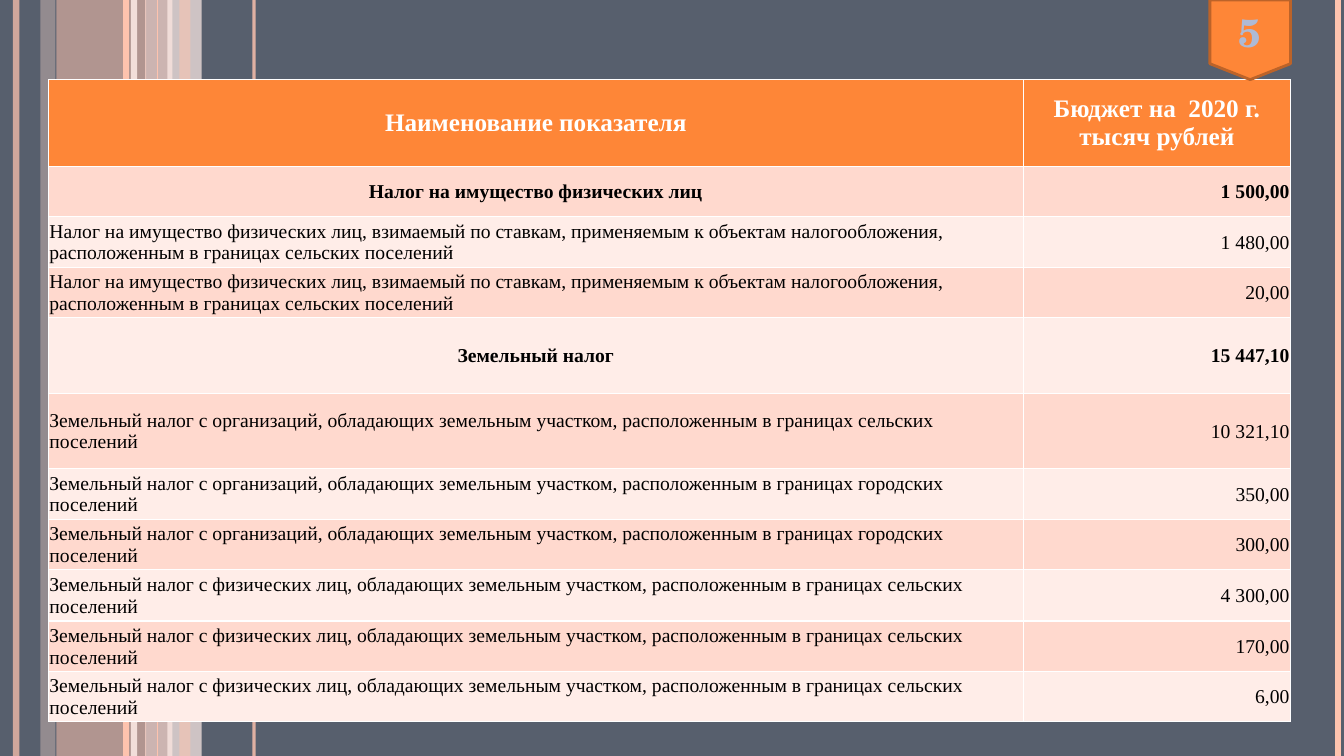
from lxml import etree
from pptx import Presentation
from pptx.dml.color import RGBColor
from pptx.enum import shapes, text
from pptx.oxml.ns import qn
from pptx.util import Inches, Pt

PAGE_NUMBER = "5"
HEADER = ("Наименование показателя", "Бюджет на  2020 г. тысяч рублей")
PROPERTY_TAX = ("Налог на имущество физических лиц, взимаемый по ставкам, применяемым к объектам "
                "налогообложения, расположенным в границах сельских поселений")
LAND_TAX = "Земельный налог с {}, обладающих земельным участком, расположенным в границах {} поселений"
RURAL_FIRMS = LAND_TAX.format("организаций", "сельских")
URBAN_FIRMS = LAND_TAX.format("организаций", "городских")
RURAL_PEOPLE = LAND_TAX.format("физических лиц", "сельских")

# name, amount, row height, is a total
TAXES = [
    ("Налог на имущество физических лиц", "1 500,00", 0.5, True),
    (PROPERTY_TAX, "1 480,00", 0.5, False),
    (PROPERTY_TAX, "20,00", 0.5, False),
    ("Земельный налог", "15 447,10", 0.75, True),
    (RURAL_FIRMS, "10 321,10", 0.75, False),
    (URBAN_FIRMS, "350,00", 0.5, False),
    (URBAN_FIRMS, "300,00", 0.5, False),
    (RURAL_PEOPLE, "4 300,00", 0.51, False),
    (RURAL_PEOPLE, "170,00", 0.5, False),
    (RURAL_PEOPLE, "6,00", 0.5, False),
]
HEADER_HEIGHT = 0.86
COLUMN_WIDTHS = (9.67, 2.65)
TABLE_LEFT, TABLE_TOP = 0.48, 0.79

THEME = {
    "background": "575F6D", "accent": "FE8637", "accent_dark": "BC6329",
    "peach": "FEC3AE", "light": "FFD9CE", "pale": "FFEDE8",
    "white": "FFFFFF", "black": "000000", "number": "AEBAD5",
    "table_font": "Times New Roman", "number_font": "TeX Gyre Schola",
    "header_size": 18, "body_size": 14, "number_size": 28,
}

# left, width, colour, opacity in percent
BARS = [
    (0.56, 0.89, "peach", 54), (0.4, 0.15, "light", 36), (1.44, 0.27, "light", 70),
    (1.66, 0.34, "pale", 71), (1.78, 0.11, "peach", 51),
]
# centre, line width in points, colour, opacity in percent
STRIPES = [
    (0.16, 4.5, "peach", 73), (1.33, 4.5, "pale", 83), (1.25, 4.5, "peach", 100),
    (2.52, 2.25, "peach", 82), (1.56, 0.75, "peach", 100), (13.27, 4.5, "peach", 100),
]
PAGE_WIDTH, PAGE_HEIGHT = 13.33, 7.5


def colour(name):
    return RGBColor.from_string(THEME[name])


def paint(fill, name):
    fill.solid()
    fill.fore_color.rgb = colour(name)


def set_opacity(shape, percent):
    if percent < 100:
        tint = next(shape._element.spPr.iter(qn("a:srgbClr")))
        etree.SubElement(tint, qn("a:alpha")).set("val", str(percent * 1000))


def add_outline(properties, tag, name, points):
    """Put a solid line element first among the given properties."""
    line = etree.Element(qn(tag), w=str(Pt(points)))
    fill = etree.SubElement(line, qn("a:solidFill"))
    etree.SubElement(fill, qn("a:srgbClr"), val=THEME[name])
    properties.insert(0, line)


def write(frame, words, align, **format_values):
    para = frame.paragraphs[0]
    para.alignment = align
    span = para.add_run()
    span.text = words
    span.font.color.rgb = colour(format_values.pop("ink"))
    for name, value in format_values.items():
        setattr(span.font, name, value)
    return span


def add_backdrop(page):
    paint(page.background.fill, "background")
    for left, width, name, opacity in BARS:
        bar = page.shapes.add_shape(shapes.MSO_SHAPE.RECTANGLE, Inches(left), 0,
                                    Inches(width), Inches(PAGE_HEIGHT))
        bar.shadow.inherit = False
        paint(bar.fill, name)
        bar.line.fill.background()
        set_opacity(bar, opacity)
    for centre, points, name, opacity in STRIPES:
        stripe = page.shapes.add_connector(shapes.MSO_CONNECTOR.STRAIGHT, Inches(centre), 0,
                                           Inches(centre), Inches(PAGE_HEIGHT))
        stripe.line.width = Pt(points)
        stripe.line.color.rgb = colour(name)
        set_opacity(stripe, opacity)
        etree.SubElement(stripe._element.spPr, qn("a:effectLst"))


def fill_cell(cell, words, align, fill, margins, **format_values):
    for tag in ("a:lnB", "a:lnT", "a:lnR", "a:lnL"):
        add_outline(cell._tc.get_or_add_tcPr(), tag, "white", 1)
    paint(cell.fill, fill)
    cell.vertical_anchor = text.MSO_ANCHOR.MIDDLE
    for side, inches in margins.items():
        setattr(cell, f"margin_{side}", Inches(inches))
    write(cell.text_frame, words, align, name=THEME["table_font"], **format_values)


def add_budget_table(page):
    heights = [HEADER_HEIGHT] + [tax[2] for tax in TAXES]
    table = page.shapes.add_table(
        len(heights), len(COLUMN_WIDTHS), Inches(TABLE_LEFT), Inches(TABLE_TOP),
        Inches(sum(COLUMN_WIDTHS)), Inches(sum(heights))).table
    for column, width in zip(table.columns, COLUMN_WIDTHS):
        column.width = Inches(width)
    for row, height in zip(table.rows, heights):
        row.height = Inches(height)

    align = text.PP_ALIGN
    for cell, words in zip(table.rows[0].cells, HEADER):
        fill_cell(cell, words, align.CENTER, "accent", {}, ink="white",
                  size=Pt(THEME["header_size"]), bold=True)
    margins = {"left": 0.01, "top": 0.01, "right": 0.01, "bottom": 0}
    for index, (name, amount, _, is_total) in enumerate(TAXES):
        fill = ("light", "pale")[index % 2]
        name_align = align.CENTER if is_total else align.LEFT
        entries = ((name, name_align), (amount, align.RIGHT))
        for cell, (words, side) in zip(table.rows[index + 1].cells, entries):
            fill_cell(cell, words, side, fill, margins, ink="black",
                      size=Pt(THEME["body_size"]), bold=is_total)


def add_page_tab(page):
    tab = page.shapes.add_shape(shapes.MSO_SHAPE.FLOWCHART_OFFPAGE_CONNECTOR,
                                Inches(12), 0, Inches(0.8), Inches(TABLE_TOP))
    tab.shadow.inherit = False
    paint(tab.fill, "accent")
    tab.line.color.rgb = colour("accent_dark")
    tab.line.width = Pt(2)
    tab.text_frame.vertical_anchor = text.MSO_ANCHOR.MIDDLE
    span = write(tab.text_frame, PAGE_NUMBER, text.PP_ALIGN.CENTER, ink="number",
                 name=THEME["number_font"], size=Pt(THEME["number_size"]), bold=True)
    add_outline(span.font._element, "a:ln", "black", 0.75)


def main():
    deck = Presentation()
    deck.slide_width, deck.slide_height = Inches(PAGE_WIDTH), Inches(PAGE_HEIGHT)
    page = deck.slides.add_slide(deck.slide_layouts[6])
    add_backdrop(page)
    add_budget_table(page)
    add_page_tab(page)
    deck.save("out.pptx")


if __name__ == "__main__":
    main()
